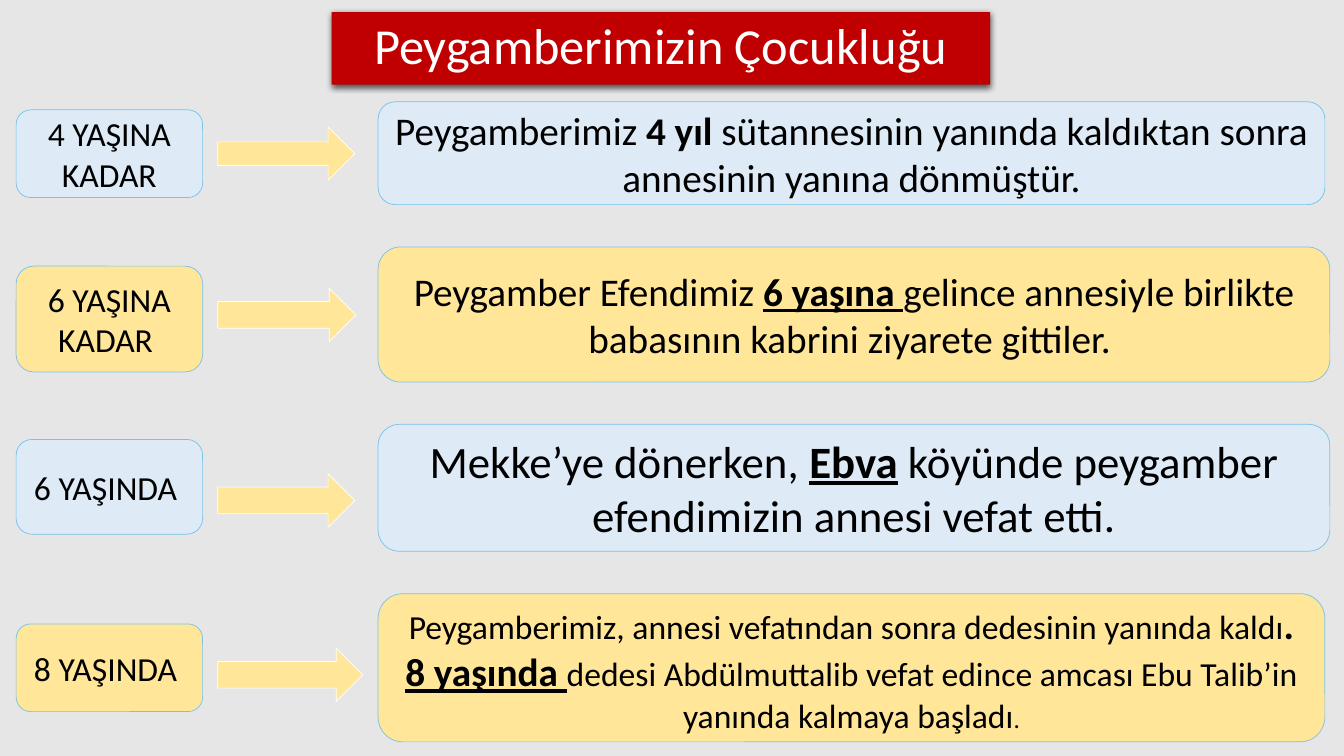
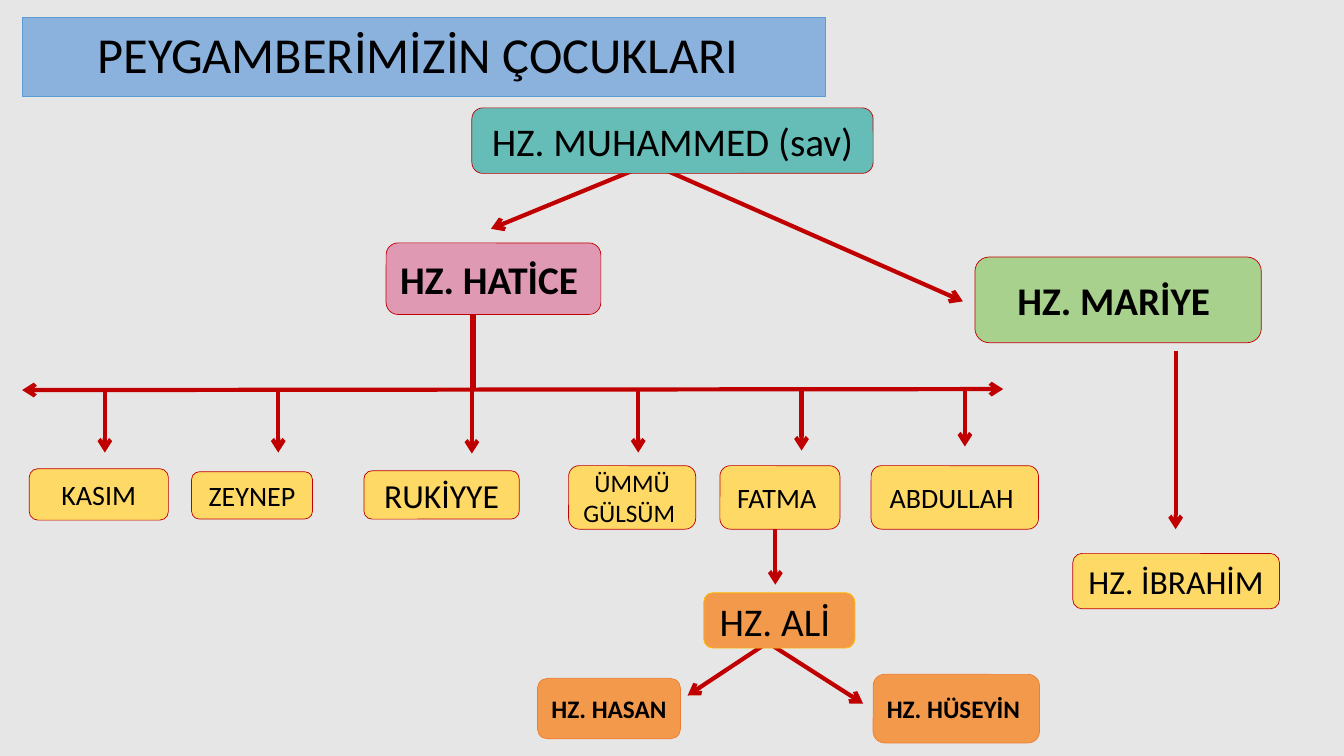
from lxml import etree
from pptx import Presentation
from pptx.dml.color import RGBColor
from pptx.enum.shapes import MSO_CONNECTOR, MSO_SHAPE
from pptx.enum.text import MSO_ANCHOR, PP_ALIGN
from pptx.oxml import parse_xml
from pptx.oxml.ns import nsdecls, qn
from pptx.util import Inches, Pt

RECT = MSO_SHAPE.RECTANGLE
ROUNDED = MSO_SHAPE.ROUNDED_RECTANGLE
RIGHT_ARROW = MSO_SHAPE.RIGHT_ARROW
STRAIGHT = MSO_CONNECTOR.STRAIGHT
MIDDLE = MSO_ANCHOR.MIDDLE
CENTER = PP_ALIGN.CENTER

FONT = "Calibri"
BACKGROUND = "E7E6E6"
BLACK = "000000"
WHITE = "FFFFFF"
RED = "C00000"
PALE_BLUE = "DEEBF7"
PALE_YELLOW = "FFE699"
SKY = "77C2E9"
GOLD = "FFD966"
ORANGE = "F3994B"
DARK_ORANGE = "ED7D31"

TITLE_STYLE = dict(kind=RECT, size=36, spacing=0.9)
EMPHASIS = dict(bold=True, underline=True)
rgb = RGBColor.from_string


def add_box(slide, at, text="", *, fill, line=None, kind=ROUNDED, size=24,
            color=BLACK, bold=False, spacing=None):
    """Add a filled shape; text is a string or a list of (text, overrides)."""
    shape = slide.shapes.add_shape(kind, *map(Inches, at))
    shape.shadow.inherit = False
    shape.fill.solid()
    shape.fill.fore_color.rgb = rgb(fill)
    if line:
        shape.line.color.rgb = rgb(line)
        shape.line.width = Pt(0.5)
    else:
        shape.line.fill.background()
    frame = shape.text_frame
    frame.word_wrap = True
    frame.vertical_anchor = MIDDLE
    paragraph = frame.paragraphs[0]
    paragraph.alignment = CENTER
    paragraph.line_spacing = spacing
    runs = [(text, {})] if isinstance(text, str) else text
    for words, overrides in runs:
        run = paragraph.add_run()
        run.text = words
        run.font.name = FONT
        run.font.size = Pt(overrides.get("size", size))
        run.font.bold = overrides.get("bold", bold)
        run.font.underline = overrides.get("underline", False)
        run.font.color.rgb = rgb(color)
    return shape


def add_link(slide, start, end, *, ends=("tailEnd",), width=3):
    """Add a red line with an arrowhead at each of the named ends."""
    link = slide.shapes.add_connector(STRAIGHT, *map(Inches, (*start, *end)))
    link.line.color.rgb = rgb(RED)
    link.line.width = Pt(width)
    for end_name in ends:
        etree.SubElement(link.line._get_or_add_ln(), qn(f"a:{end_name}"), type="arrow")
    etree.SubElement(link._element.spPr, qn("a:effectLst"))


prs = Presentation()
prs.slide_width = Inches(13.33)
prs.slide_height = Inches(7.5)
master_fill = prs.slide_master.background.fill
master_fill.solid()
master_fill.fore_color.rgb = rgb(BACKGROUND)
blank = prs.slide_layouts[6]

# Slide 1: childhood by age
childhood = prs.slides.add_slide(blank)
title = add_box(childhood, (3.29, 0.12, 6.53, 0.72), "Peygamberimizin Çocukluğu",
                fill=RED, color=WHITE, **TITLE_STYLE)
title_effects = title._element.spPr.find(qn("a:effectLst"))
title_effects.append(parse_xml(
    f'<a:outerShdw {nsdecls("a")} blurRad="{Pt(4.5)}" dist="{Pt(1.5)}" dir="5400000">'
    f'<a:srgbClr val="{BLACK}"><a:alpha val="63000"/></a:srgbClr></a:outerShdw>'))

# age, (top, height) of age box, arrow (top, width), event (top, width, height), size, text
stages = [
    ("4 YAŞINA KADAR", (1.09, 0.87), (1.26, 1.36), (1.01, 9.39, 1.02), 28, [
        ("Peygamberimiz ", {}),
        ("4 yıl ", dict(bold=True)),
        ("sütannesinin yanında kaldıktan sonra annesinin yanına dönmüştür.", {})]),
    ("6 YAŞINA KADAR ", (2.64, 1.05), (2.86, 1.37), (2.45, 9.44, 1.34), 28, [
        ("Peygamber Efendimiz ", {}),
        ("6 yaşına ", EMPHASIS),
        ("gelince annesiyle birlikte babasının kabrini ziyarete gittiler. ", {})]),
    ("6 YAŞINDA ", (4.36, 0.94), (4.7, 1.36), (4.21, 9.44, 1.26), 32, [
        ("Mekke’ye dönerken, ", {}),
        ("Ebva", EMPHASIS),
        (" köyünde peygamber efendimizin annesi vefat etti.", {})]),
    ("8 YAŞINDA ", (6.19, 0.87), (6.43, 1.44), (5.89, 9.39, 1.47), 24, [
        ("Peygamberimiz, annesi vefatından sonra dedesinin yanında kaldı", {}),
        (". ", dict(size=28, bold=True)),
        ("8 yaşında ", dict(size=28, **EMPHASIS)),
        ("dedesi Abdülmuttalib vefat edince amcası Ebu Talib’in yanında kalmaya başladı", {}),
        (".", dict(size=18))]),
]
for index, (age, age_rows, arrow, event, event_size, event_text) in enumerate(stages):
    fill = (PALE_BLUE, PALE_YELLOW)[index % 2]
    age_top, age_height = age_rows
    arrow_top, arrow_width = arrow
    add_box(childhood, (0.16, age_top, 1.85, age_height), age, fill=fill, line=SKY)
    pointer = add_box(childhood, (2.16, arrow_top, arrow_width, 0.53),
                      fill=PALE_YELLOW, line=WHITE, kind=RIGHT_ARROW)
    if index == 0:
        pointer.adjustments[0] = 0.44
    add_box(childhood, (3.75, *event), event_text, fill=fill, line=SKY, size=event_size)

# Slide 2: family tree
family = prs.slides.add_slide(blank)
add_box(family, (0.22, 0.17, 7.97, 0.79), "PEYGAMBERİMİZİN ÇOCUKLARI ",
        fill="8BB2DD", line="5B9BD5", **TITLE_STYLE)

BRANCH_Y = 3.86
add_link(family, (4.69, 3.08), (4.69, BRANCH_Y), ends=(), width=4.5)
add_link(family, (0.22, 3.87), (9.95, BRANCH_Y), ends=("headEnd", "tailEnd"))
descents = [
    ((6.6, 1.56), (4.87, 2.27)),
    ((6.47, 1.63), (9.55, 2.99)),
    ((11.66, 3.48), (11.66, 5.25)),
    ((7.69, 5.25), (7.69, 5.8)),
    ((7.65, 6.35), (6.82, 6.9)),
    ((7.45, 6.27), (8.56, 6.98)),
]
for start, end in descents:
    add_link(family, start, end)

# name, box, text size, arrow x, arrow tip y
children = [
    ("KASIM", (0.29, 4.65, 1.38, 0.51), 20, 1.04, 4.49),
    ("ZEYNEP", (1.9, 4.68, 1.2, 0.47), 20, 2.76, 4.49),
    ("RUKİYYE", (3.61, 4.67, 1.54, 0.48), 24, 4.68, 4.5),
    ("ÜMMÜ GÜLSÜM ", (5.64, 4.62, 1.26, 0.63), 18, 6.33, 4.49),
    ("FATMA ", (7.14, 4.62, 1.19, 0.63), 20, 7.95, 4.47),
    ("ABDULLAH ", (8.64, 4.62, 1.66, 0.63), 20, 9.57, 4.43),
]
for name, at, size, arrow_x, tip_y in children:
    add_link(family, (arrow_x, BRANCH_Y), (arrow_x, tip_y))
    add_box(family, at, name, fill=GOLD, line=RED, size=size)

# name, box, fill, line, text size, bold
relatives = [
    ("HZ. MUHAMMED (sav)", (4.68, 1.07, 3.98, 0.65), "66BDB7", RED, 28, False),
    ("HZ. HATİCE ", (3.83, 2.41, 2.13, 0.71), "DF99B3", RED, 28, True),
    ("HZ. MARİYE ", (9.67, 2.55, 2.84, 0.85), "A9D18E", RED, 28, True),
    ("HZ. İBRAHİM ", (10.64, 5.49, 2.05, 0.55), GOLD, RED, 24, False),
    ("HZ. ALİ ", (6.98, 5.88, 1.5, 0.55), ORANGE, "FFC000", 28, False),
    ("HZ. HASAN", (5.33, 6.73, 1.42, 0.6), ORANGE, DARK_ORANGE, 18, True),
    ("HZ. HÜSEYİN ", (8.66, 6.69, 1.65, 0.68), ORANGE, DARK_ORANGE, 18, True),
]
for name, at, fill, line, size, bold in relatives:
    add_box(family, at, name, fill=fill, line=line, size=size, bold=bold)

prs.save("out.pptx")
